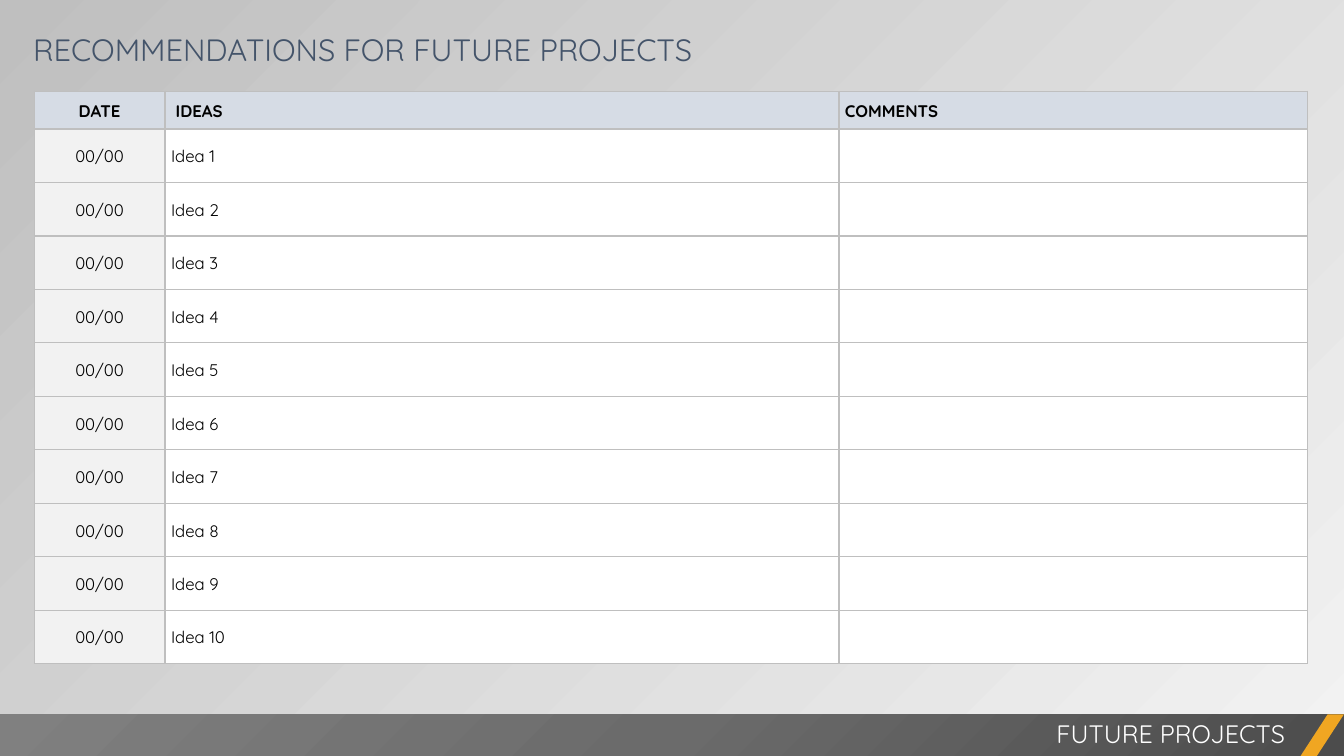
from dataclasses import dataclass

from lxml import etree
from pptx import Presentation
from pptx.dml.color import RGBColor
from pptx.enum import shapes, text
from pptx.oxml import ns
from pptx.util import Pt


@dataclass(frozen=True)
class Theme:
    font: str = "Quicksand"
    title_size: float = 22
    footer_size: float = 18
    table_size: float = 12
    title: str = "44546A"
    ink: str = "000000"
    white: str = "FFFFFF"
    header_fill: str = "D6DCE5"
    date_fill: str = "F2F2F2"
    border: str = "BFBFBF"
    accent: str = "F0A622"
    page_stops: tuple = ((0, "F2F2F2"), (100, "BFBFBF"))
    bar_stops: tuple = ((0, "4C4C4C"), (50, "6B6B6B"), (100, "808080"))


THEME = Theme()
PAGE_WIDTH, PAGE_HEIGHT = 960, 540
BAR_TOP, BAR_HEIGHT = 510.2, 29.8
COLUMN_WIDTHS = (93.4, 481.4, 334.8)
HEADER_HEIGHT, ROW_HEIGHT = 27, 38.2
HEADINGS = ("DATE", " IDEAS", "COMMENTS")
IDEA_COUNT = 10


def add_element(parent, tag, **attributes):
    return etree.SubElement(parent, ns.qn(tag), attributes)


def set_gradient(fill, holder, stops):
    """Fill with the given stops and return the gradient element."""
    fill.gradient()
    gradient = next(holder.iter(ns.qn("a:gradFill")))
    for child in list(gradient):
        gradient.remove(child)
    stop_list = add_element(gradient, "a:gsLst")
    for position, color in stops:
        stop = add_element(stop_list, "a:gs", pos=str(position * 1000))
        add_element(stop, "a:srgbClr", val=color)
    return gradient


def format_text(para, size, color, bold=False):
    for span in para.runs:
        span.font.name = THEME.font
        span.font.size = Pt(size)
        span.font.bold = bold
        span.font.color.rgb = RGBColor.from_string(color)


def add_label(page, words, frame, size, color):
    box = page.shapes.add_textbox(*map(Pt, frame))
    box.text_frame.word_wrap = True
    box.text_frame.text = words
    para = box.text_frame.paragraphs[0]
    format_text(para, size, color)
    return box.text_frame, para


def add_plain_shape(page, kind, frame):
    shape = page.shapes.add_shape(kind, *map(Pt, frame))
    shape.shadow.inherit = False
    shape.line.fill.background()
    return shape


def set_borders(cell):
    properties = cell._tc.get_or_add_tcPr()
    for index, side in enumerate(("a:lnL", "a:lnR", "a:lnT", "a:lnB")):
        line = etree.Element(ns.qn(side), w=str(Pt(1)))
        add_element(add_element(line, "a:solidFill"), "a:srgbClr", val=THEME.border)
        properties.insert(index, line)


def fill_cell(cell, words, color, centered, bold):
    cell.fill.solid()
    cell.fill.fore_color.rgb = RGBColor.from_string(color)
    set_borders(cell)
    cell.margin_left = cell.margin_right = Pt(4.3)
    cell.margin_top = cell.margin_bottom = 0
    cell.vertical_anchor = text.MSO_ANCHOR.MIDDLE
    cell.text_frame.text = words
    para = cell.text_frame.paragraphs[0]
    para.line_spacing = 1.07
    para.alignment = text.PP_ALIGN.CENTER if centered else text.PP_ALIGN.LEFT
    format_text(para, THEME.table_size, THEME.ink, bold)


def add_ideas_table(page):
    rows = [HEADINGS] + [("00/00", f"Idea {n}", "") for n in range(1, IDEA_COUNT + 1)]
    height = HEADER_HEIGHT + IDEA_COUNT * ROW_HEIGHT
    frame = (24.5, 65.2, sum(COLUMN_WIDTHS), height)
    table = page.shapes.add_table(len(rows), len(HEADINGS), *map(Pt, frame)).table
    table.horz_banding = False
    for column, width in zip(table.columns, COLUMN_WIDTHS):
        column.width = Pt(width)
    for r, values in enumerate(rows):
        is_header = r == 0
        table.rows[r].height = Pt(HEADER_HEIGHT if is_header else ROW_HEIGHT)
        for c, words in enumerate(values):
            is_date = c == 0
            body_fill = THEME.date_fill if is_date else THEME.white
            color = THEME.header_fill if is_header else body_fill
            fill_cell(table.cell(r, c), words, color, is_date, is_header)


def add_title(page):
    frame, para = add_label(page, "RECOMMENDATIONS FOR FUTURE PROJECTS",
                            (15.1, 12.2, 549.4, 37.4), THEME.title_size, THEME.title)
    frame.margin_left = frame.margin_right = Pt(8.6)
    frame.margin_top = frame.margin_bottom = Pt(4.3)
    para.line_spacing = 1.2
    para.space_before = Pt(4.4)


def add_footer(page):
    bar = add_plain_shape(page, shapes.MSO_SHAPE.RECTANGLE,
                          (0, BAR_TOP, PAGE_WIDTH, BAR_HEIGHT))
    gradient = set_gradient(bar.fill, bar._element.spPr, THEME.bar_stops)
    shading = add_element(gradient, "a:path", path="circle")
    add_element(shading, "a:fillToRect", l="100000", t="100000")

    slash = add_plain_shape(page, shapes.MSO_SHAPE.PARALLELOGRAM,
                            (929, BAR_TOP, 31, BAR_HEIGHT))
    slash.adjustments[0] = 0.65
    slash.fill.solid()
    slash.fill.fore_color.rgb = RGBColor.from_string(THEME.accent)

    _, para = add_label(page, "FUTURE PROJECTS", (378, 509.8, 547, 29),
                        THEME.footer_size, THEME.white)
    para.alignment = text.PP_ALIGN.RIGHT


def main():
    deck = Presentation()
    deck.slide_width, deck.slide_height = Pt(PAGE_WIDTH), Pt(PAGE_HEIGHT)
    page = deck.slides.add_slide(deck.slide_layouts[6])
    gradient = set_gradient(page.background.fill, page._element, THEME.page_stops)
    add_element(gradient, "a:lin", ang=str(225 * 60000), scaled="0")
    add_ideas_table(page)
    add_title(page)
    add_footer(page)
    deck.save("out.pptx")


if __name__ == "__main__":
    main()
